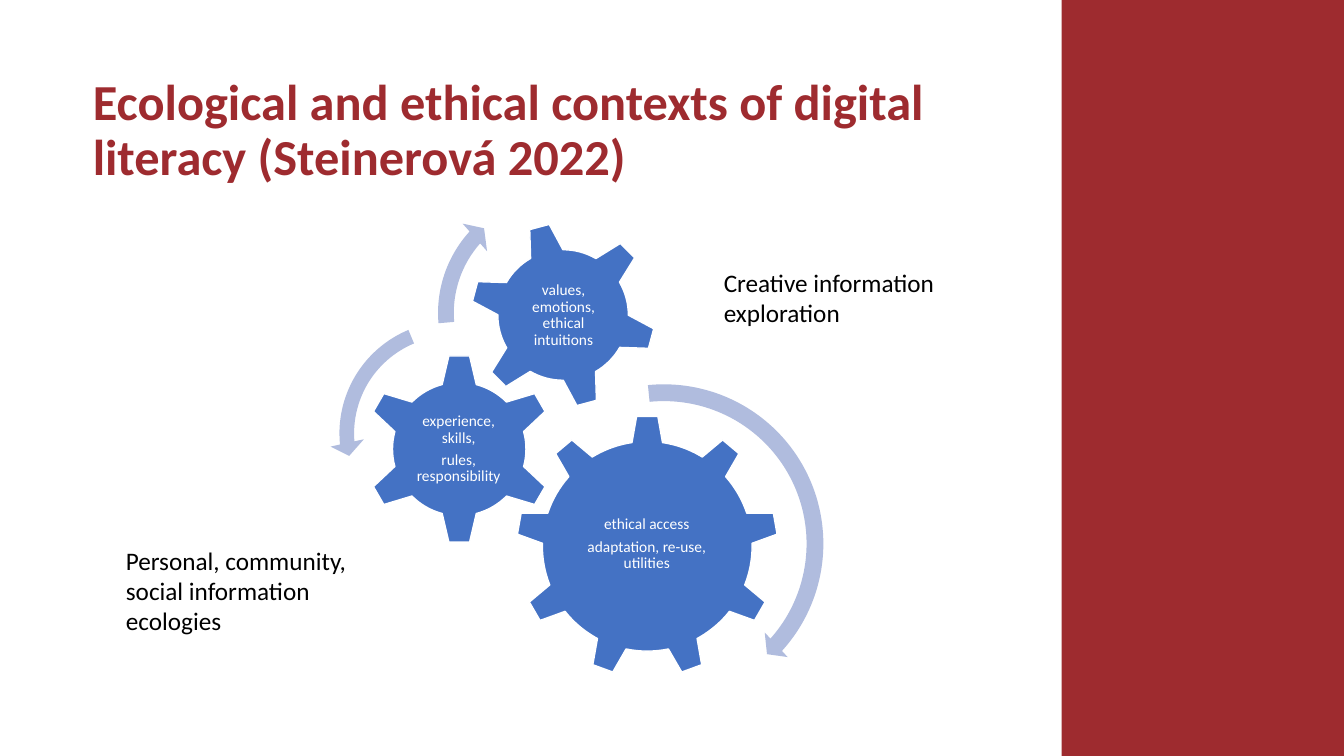
from dataclasses import dataclass
from pptx import Presentation
from pptx.dml.color import RGBColor as RGB
from pptx.enum.shapes import MSO_SHAPE as Form
from pptx.enum.text import MSO_ANCHOR as Anchor, MSO_AUTO_SIZE as Fit, PP_ALIGN as Align
from pptx.util import Inches, Pt


@dataclass(frozen=True)
class Theme:
    font: str = "Calibri"
    red: str = "9E2B2F"
    blue: str = "4472C4"
    pale: str = "B0BCDE"
    white: str = "FFFFFF"
    black: str = "000000"
    head: int = 36
    note: int = 18
    small: int = 11


class Deck:
    def __init__(self, theme):
        self.theme = theme
        self.prs = Presentation()
        self.prs.slide_width = Inches(13.33)
        self.prs.slide_height = Inches(7.5)
        self.slide = self.prs.slides.add_slide(self.prs.slide_layouts[5])

    def fill_text(self, frame, lines, size, color, bold=False, align=Align.LEFT,
                  pitch=None, after=0):
        frame.word_wrap = True
        for i, line in enumerate(lines):
            para = frame.paragraphs[0] if i == 0 else frame.add_paragraph()
            para.alignment = align
            para.line_spacing = pitch
            para.space_before = Pt(0)
            para.space_after = Pt(after)
            run = para.add_run()
            run.text = line
            font = run.font
            font.name, font.size, font.bold = self.theme.font, Pt(size), bold
            font.color.rgb = RGB.from_string(color)

    def title(self, box, text):
        shape = self.slide.shapes.title
        shape.left, shape.top, shape.width, shape.height = map(Inches, box)
        frame = shape.text_frame
        frame.auto_size = Fit.NONE
        frame.vertical_anchor = Anchor.MIDDLE
        frame.margin_left = 0
        self.fill_text(frame, [text], self.theme.head, self.theme.red, bold=True, pitch=0.9)

    def shape(self, form, box, fill, edge=None, turn=0, adjust=()):
        shape = self.slide.shapes.add_shape(form, *map(Inches, box))
        shape.shadow.inherit = False
        shape.rotation = turn
        shape.fill.solid()
        shape.fill.fore_color.rgb = RGB.from_string(fill)
        if edge:
            shape.line.color.rgb = RGB.from_string(edge)
            shape.line.width = Pt(1)
        else:
            shape.line.fill.background()
        for i, value in enumerate(adjust):
            shape.adjustments[i] = value

    def gear(self, form, left, top, size, turn, box, lines):
        look = self.theme
        self.shape(form, (left, top, size, size), look.blue, look.white, turn)
        frame = self.slide.shapes.add_textbox(*map(Inches, box)).text_frame
        frame.vertical_anchor = Anchor.MIDDLE
        frame.margin_left = frame.margin_right = Inches(0.02)
        frame.margin_top = frame.margin_bottom = Inches(0.02)
        self.fill_text(frame, lines, look.small, look.white, align=Align.CENTER,
                       pitch=0.9, after=3.85)

    def arrow(self, form, left, top, size, adjust):
        self.shape(form, (left, top, size, size), self.theme.pale, adjust=adjust)

    def note(self, box, text):
        frame = self.slide.shapes.add_textbox(*map(Inches, box)).text_frame
        frame.auto_size = Fit.SHAPE_TO_FIT_TEXT
        self.fill_text(frame, [text], self.theme.note, self.theme.black)


def main():
    look = Theme()
    deck = Deck(look)

    # Side band and title
    deck.shape(Form.RECTANGLE, (10.53, 0, 2.8, 7.5), look.red)
    deck.title((0.92, 0.77, 8.88, 1.07),
               "Ecological and ethical contexts of digital literacy (Steinerová 2022)")

    # Gears with their labels
    deck.gear(Form.GEAR_9, 5.12, 4.12, 2.6, 0, (5.64, 4.73, 1.55, 1.34),
              ["ethical access", "adaptation, re-use, utilities"])
    deck.gear(Form.GEAR_6, 3.61, 3.51, 1.89, 0, (4.08, 3.99, 0.94, 0.93),
              ["experience, skills,", "rules, responsibility"])
    deck.gear(Form.GEAR_6, 4.66, 2.2, 1.85, 345, (5.07, 2.61, 1.04, 1.04),
              ["values, emotions, ethical intuitions"])

    # Turning arrows
    deck.arrow(Form.CIRCULAR_ARROW, 4.92, 3.73, 3.33, (0.05, 2.99, 25.19, 158.55, 0.05))
    deck.arrow(Form.LEFT_CIRCULAR_ARROW, 3.27, 3.09, 2.42, (0.06, 4.3, 104.89, 148.38, 0.07))
    deck.arrow(Form.CIRCULAR_ARROW, 4.24, 1.8, 2.61, (0.06, 3.94, 133.14, 105.08, 0.07))

    # Side notes
    deck.note((1.15, 5.36, 2.72, 1.31), "Personal, community, social information ecologies")
    deck.note((7.08, 2.6, 2.98, 1.01), "Creative information exploration")

    deck.prs.save("out.pptx")


if __name__ == "__main__":
    main()
